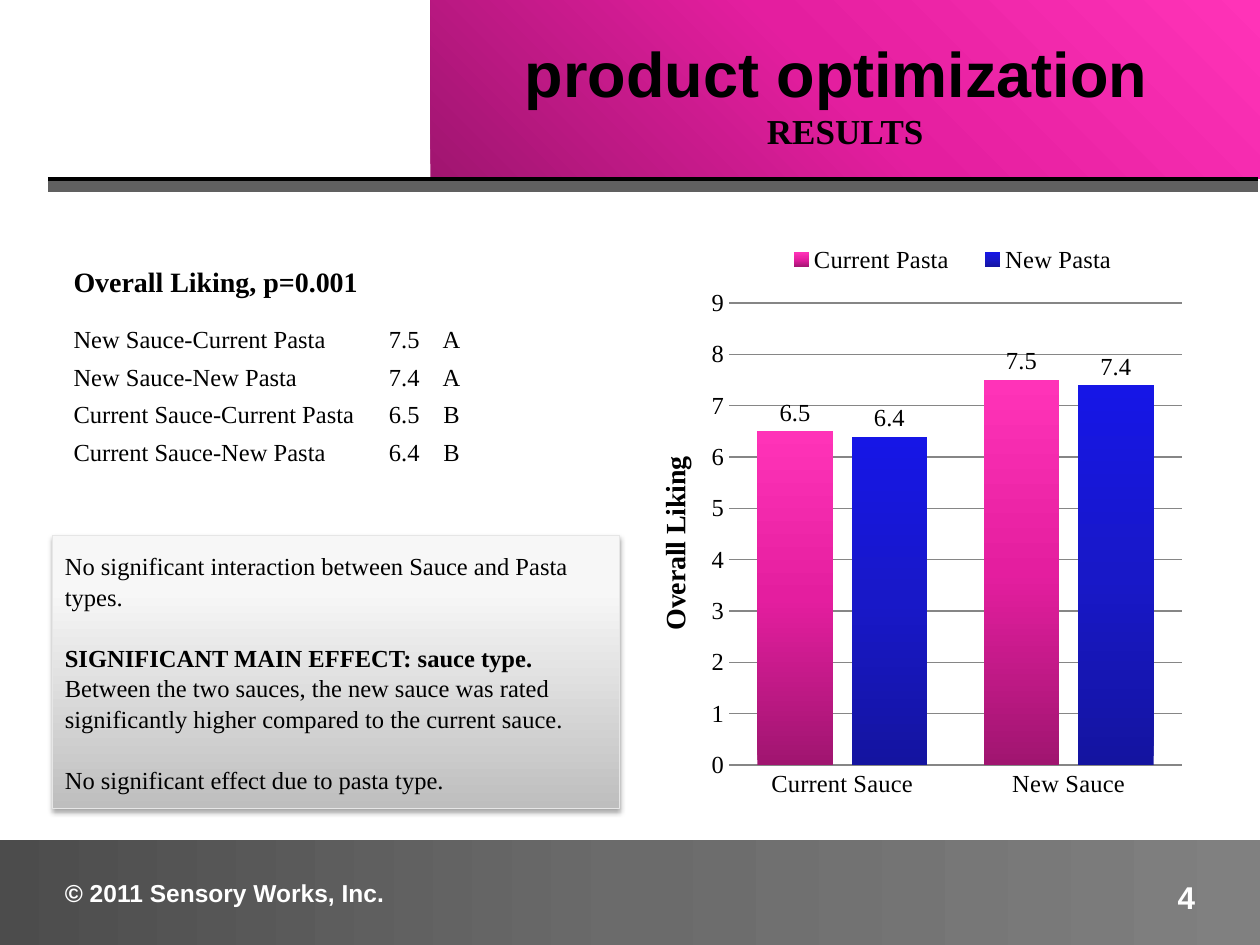
from lxml import etree
from pptx import Presentation
from pptx.chart.data import CategoryChartData
from pptx.dml.color import RGBColor
from pptx.enum.chart import XL_CHART_TYPE, XL_LABEL_POSITION, XL_LEGEND_POSITION, XL_TICK_MARK
from pptx.enum.shapes import MSO_CONNECTOR, MSO_SHAPE
from pptx.enum.text import MSO_ANCHOR, PP_ALIGN
from pptx.oxml.ns import qn
from pptx.util import Pt

LEFT, CENTER, RIGHT = PP_ALIGN.LEFT, PP_ALIGN.CENTER, PP_ALIGN.RIGHT
TOP, MIDDLE, BOTTOM = MSO_ANCHOR.TOP, MSO_ANCHOR.MIDDLE, MSO_ANCHOR.BOTTOM
RECT, STRAIGHT = MSO_SHAPE.RECTANGLE, MSO_CONNECTOR.STRAIGHT
COLUMN = XL_CHART_TYPE.COLUMN_CLUSTERED
OUTSIDE = XL_LABEL_POSITION.OUTSIDE_END
ABOVE, NO_TICK = XL_LEGEND_POSITION.TOP, XL_TICK_MARK.NONE

SERIF, SANS = "Times New Roman", "Arial"
BLACK, WHITE = "000000", "FFFFFF"
PINK = [(0, "A01570"), (50, "E41E9F"), (100, "FF33B8")]
BLUE = [(0, "1414A0"), (50, "1818C8"), (100, "1616E6")]
DARK = [(0, "4C4C4C"), (50, "6B6B6B"), (100, "808080")]
PALE = [(0, "BEBEBE"), (80, "F7F7F7"), (100, "F8F8F8")]

BODY = {"name": SERIF, "size": Pt(14), "bold": False, "color": BLACK}
STRONG = {**BODY, "bold": True}
HEAD = {**STRONG, "size": Pt(16)}
SUB = {**STRONG, "size": Pt(20)}
TITLE = {"name": SANS, "size": Pt(36), "bold": True, "color": BLACK}
FOOT = {"name": SANS, "size": Pt(14), "bold": True, "color": WHITE}
PAGE = {**FOOT, "size": Pt(18)}


def paint(color):
    """Turn a hex string into a colour."""
    return RGBColor.from_string(color)


def style(font, form):
    """Set font attributes from a dict of format values."""
    for key, value in form.items():
        if key == "color":
            font.color.rgb = paint(value)
        else:
            setattr(font, key, value)


def add_sub(parent, tag, **attrs):
    """Append a child element with the given attributes."""
    child = etree.SubElement(parent, qn(tag))
    for key, value in attrs.items():
        child.set(key, str(value))
    return child


def shade(fill, owner, stops, angle):
    """Give a fill a linear gradient, its angle counter-clockwise."""
    fill.gradient()
    fill.gradient_angle = angle
    group = next(owner.iter(qn("a:gsLst")))
    for stop in list(group):
        group.remove(stop)
    for place, color in stops:
        stop = add_sub(group, "a:gs", pos=place * 1000)
        add_sub(stop, "a:srgbClr", val=color)


def add_panel(slide, box, stops, angle):
    """Add a borderless rectangle with a gradient."""
    panel = slide.shapes.add_shape(RECT, *map(Pt, box))
    panel.shadow.inherit = False
    shade(panel.fill, panel._element, stops, angle)
    panel.line.fill.background()
    return panel


def add_rule(slide, y, color):
    """Add a thick horizontal line below the header."""
    rule = slide.shapes.add_connector(STRAIGHT, Pt(27.4), Pt(y), Pt(718.6), Pt(y))
    rule.line.color.rgb = paint(color)
    rule.line.width = Pt(6)
    add_sub(rule._element.spPr, "a:effectLst")


def write(frame, rows, align=LEFT, spacing=None):
    """Fill a text frame from rows of text, format and space before."""
    frame.word_wrap = True
    for index, (text, form, gap) in enumerate(rows):
        para = frame.paragraphs[0] if index == 0 else frame.add_paragraph()
        para.alignment = align
        para.line_spacing = spacing
        if gap:
            para.space_before = Pt(gap)
        run = para.add_run()
        run.text = text
        style(run.font, form)


def add_text(slide, box, rows, align, inset):
    """Add a text box with its text at the top."""
    frame = slide.shapes.add_textbox(*map(Pt, box)).text_frame
    frame.vertical_anchor = TOP
    frame.margin_top = Pt(inset)
    write(frame, rows, align)


def add_scores(slide):
    """Add the table of liking scores."""
    data = [
        ("New Sauce-Current Pasta", "7.5", "A"),
        ("New Sauce-New Pasta", "7.4", "A"),
        ("Current Sauce-Current Pasta", "6.5", "B"),
        ("Current Sauce-New Pasta", "6.4", "B"),
    ]
    table = slide.shapes.add_table(4, 3, Pt(42), Pt(150), Pt(228), Pt(108)).table
    table.first_row = table.horz_banding = False
    for column, width in zip(table.columns, (174, 30, 24)):
        column.width = Pt(width)
    for row, height in zip(table.rows, (43.2, 21.6, 21.6, 21.6)):
        row.height = Pt(height)
    for r, texts in enumerate(data):
        for c, text in enumerate(texts):
            cell = table.cell(r, c)
            cell.fill.background()
            cell.vertical_anchor = BOTTOM
            for side in ("left", "right", "top", "bottom"):
                setattr(cell, "margin_" + side, 0)
            rows = [(text, BODY, 0)]
            if r == c == 0:
                rows = [("Overall Liking, p=0.001", HEAD, 0), (text, BODY, 16)]
            write(cell.text_frame, rows, CENTER if c else LEFT)


def add_notes(slide):
    """Add the shadowed box of findings."""
    panel = add_panel(slide, (30, 306, 324, 156), PALE, 90)
    panel.line.color.rgb = paint("E6E6E6")
    panel.line.width = Pt(0.75)
    effects = next(panel._element.iter(qn("a:effectLst")))
    shadow = add_sub(effects, "a:outerShdw", blurRad=Pt(3.1), dist=Pt(1.8),
                     dir=90 * 60000, rotWithShape=0)
    add_sub(add_sub(shadow, "a:srgbClr", val=BLACK), "a:alpha", val=35000)
    panel.text_frame.vertical_anchor = MIDDLE
    write(panel.text_frame, [
        ("No significant interaction between Sauce and Pasta types.", BODY, 0),
        ("SIGNIFICANT MAIN EFFECT: sauce type.", STRONG, 16.8),
        ("Between the two sauces, the new sauce was rated significantly "
         "higher compared to the current sauce.", BODY, 0),
        ("No significant effect due to pasta type.", BODY, 16.8),
    ], spacing=1.05)


def arrange(part, index, places):
    """Fix the place of a chart part as shares of the chart."""
    for old in part.findall(qn("c:layout")):
        part.remove(old)
    layout = add_sub(part, "c:layout")
    part.insert(index, layout)
    manual = add_sub(layout, "c:manualLayout")
    for key, value in places.items():
        add_sub(manual, "c:" + key, val=value)


def add_bars(slide):
    """Add the column chart of overall liking."""
    data = CategoryChartData()
    data.categories = ["Current Sauce", "New Sauce"]
    data.add_series("Current Pasta", (6.5, 7.5))
    data.add_series("New Pasta", (6.4, 7.4))
    box = map(Pt, (360, 132, 323.5, 330))
    chart = slide.shapes.add_chart(COLUMN, *box, data).chart
    style(chart.font, BODY)
    chart.has_title = False
    chart.has_legend = True
    chart.legend.position = ABOVE
    chart.legend.include_in_layout = False
    plot = chart.plots[0]
    plot.gap_width, plot.overlap, plot.vary_by_categories = 75, -25, False
    for series, stops in zip(plot.series, (PINK, BLUE)):
        shade(series.format.fill, series._element, stops, 90)
    plot.has_data_labels = True
    plot.data_labels.show_value = True
    plot.data_labels.position = OUTSIDE
    style(plot.data_labels.font, BODY)
    cats, vals = chart.category_axis, chart.value_axis
    for axis in (cats, vals):
        axis.major_tick_mark = axis.minor_tick_mark = NO_TICK
    for line in (cats.format.line, vals.major_gridlines.format.line):
        line.color.rgb = paint("868686")
        line.width = Pt(0.75)
    vals.format.line.fill.background()
    vals.minimum_scale, vals.maximum_scale, vals.major_unit = 0, 9, 1
    write(vals.axis_title.text_frame, [("Overall Liking", HEAD, 0)], CENTER)
    arrange(chart._chartSpace.chart.plotArea, 0, {
        "layoutTarget": "inner", "xMode": "edge", "yMode": "edge",
        "x": 0.175, "y": 0.125, "w": 0.8, "h": 0.8})
    arrange(chart.legend._element, 1, {
        "xMode": "edge", "yMode": "edge", "x": 0.24, "y": 0.01, "w": 0.66, "h": 0.08})


def main():
    """Build and save the slide."""
    deck = Presentation()
    deck.slide_width, deck.slide_height = Pt(720), Pt(540)
    slide = deck.slides.add_slide(deck.slide_layouts[6])
    add_panel(slide, (246, 0, 474, 102), PINK, 45)
    add_panel(slide, (0, 480, 720, 60), DARK, 0)
    add_rule(slide, 104.4, BLACK)
    add_rule(slide, 106.6, "606060")
    heading = [("product optimization ", TITLE, 0), ("RESULTS", SUB, 0)]
    add_text(slide, (246, 12, 474, 90), heading, CENTER, 7.5)
    add_scores(slide)
    add_notes(slide)
    add_bars(slide)
    owner = [("© 2011 Sensory Works, Inc.", FOOT, 0)]
    add_text(slide, (30, 497, 204, 31), owner, LEFT, 5)
    add_text(slide, (540, 497, 150, 31), [("4", PAGE, 0)], RIGHT, 5)
    deck.save("out.pptx")


if __name__ == "__main__":
    main()
